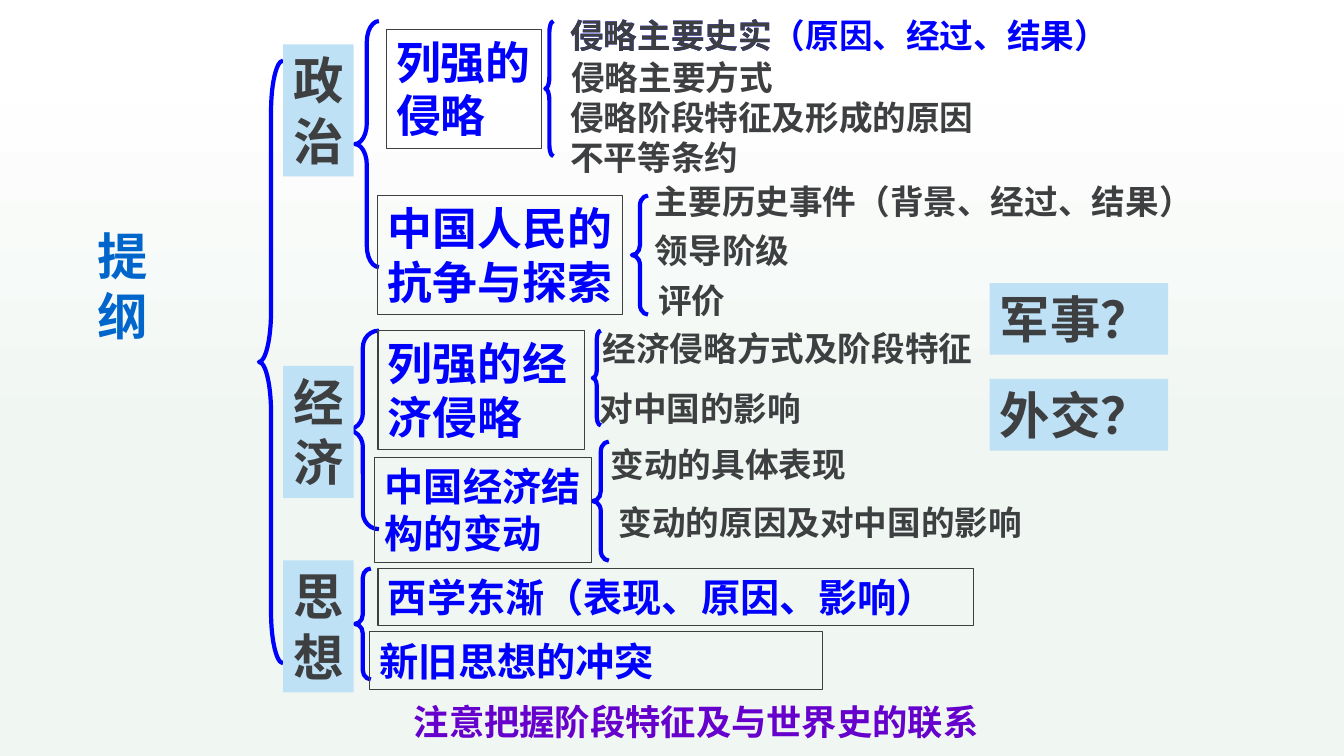
from pptx import Presentation, util as u
from pptx.dml.color import RGBColor
from pptx.enum import shapes, text
from pptx.oxml.ns import qn
from lxml import etree

HUE = {"ink": "3D3F41", "blue": "0000FF", "sky": "BFE1F6", "mist": "F0F6F2",
       "white": "FFFFFF", "title": "0066CC", "rim": "99CCFF",
       "plum": "6600CC", "pink": "CC00CC", "lilac": "CC99FF"}
LATIN, HAN = "Arial", "Noto Sans CJK SC"

# Braces: left, top, width, height, curve
BRACES = [
    (185, 43.2, 17.3, 430.6, 2.11),
    (253.4, 15.1, 17.3, 175.7, 0.86),
    (389.5, 15.1, 5.8, 96.5, 1.4),
    (451.4, 139.7, 11.5, 85, 0.62),
    (247.7, 236.2, 23, 141.8, 0.52),
    (423.4, 236.2, 5.8, 67.7, 0.99),
    (423.4, 315.4, 11.5, 85, 0.62),
    (253.4, 406.1, 11.5, 79.2, 0.58),
]
# Filled tags: left, top, width, height, wrap, text
TAGS = [
    (202.3, 31.7, 50.4, 94.3, False, "政\n治"),
    (202.3, 261.4, 50.4, 94.3, False, "经\n济"),
    (202.3, 400.3, 50.4, 94.3, False, "思\n想"),
    (707, 202.3, 127.4, 51.1, True, "军事？"),
    (707, 270.7, 127.4, 51.1, True, "外交？"),
]
# Framed topics: left, top, width, height, wrap, size, text
TOPICS = [
    (275.8, 20.9, 110.9, 85, False, 32, "列强的\n侵略"),
    (270, 139.7, 175, 85, False, 32, "中国人民的\n抗争与探索"),
    (270, 236.2, 147.6, 85, True, 32, "列强的经济侵略"),
    (267.8, 326.9, 154.8, 74.9, False, 28, "中国经济结\n构的变动"),
    (270, 406.1, 425.5, 41, True, 28, "西学东渐（表现、原因、影响）"),
    (264.2, 451.4, 323.3, 41, True, 28, "新旧思想的冲突"),
]
# Plain notes: left, top, width, wrap, colour, text
NOTES = [
    (400.3, 7.2, 400.3, False, "blue", "侵略主要史实（原因、经过、结果）"),
    (400.3, 7.2, 159.1, False, "ink", "侵略主要史实"),
    (401, 37.4, 159.1, False, "ink", "侵略主要方式"),
    (400.3, 65.5, 303.8, False, "ink", "侵略阶段特征及形成的原因"),
    (400.3, 94.3, 134.6, False, "ink", "不平等条约"),
    (460.8, 126, 400.3, False, "ink", "主要历史事件（背景、经过、结果）"),
    (460.8, 160.6, 126.7, True, "ink", "领导阶级"),
    (463, 196.6, 96.5, True, "ink", "评价"),
    (423.4, 230.4, 289.4, True, "ink", "经济侵略方式及阶段特征"),
    (421.2, 273.6, 200.2, True, "ink", "对中国的影响"),
    (429.1, 313.2, 221, True, "ink", "变动的具体表现"),
    (434.9, 355, 340.6, True, "ink", "变动的原因及对中国的影响"),
]
TITLE = (41.8, 157, 91.4, 198), "提\n纲"
FOOT = (185.8, 496.8, 622.8, 39.6), "注意把握阶段特征及与世界史的联系"

deck = Presentation()
deck.slide_width, deck.slide_height = u.Pt(960), u.Pt(540)
page = deck.slides.add_slide(deck.slide_layouts[6])


def rgb(name):
    return RGBColor.from_string(HUE[name])


def blend(fill, angle, *stops):
    fill.gradient()
    fill.gradient_angle = angle
    for stop, (place, name) in zip(fill.gradient_stops, stops):
        stop.position, stop.color.rgb = place, rgb(name)


def draw(kind, box, fill=None, line=None, width=0.75):
    item = page.shapes.add_shape(kind, *map(u.Pt, box))
    item.shadow.inherit = False
    if fill:
        item.fill.solid()
        item.fill.fore_color.rgb = rgb(fill)
    else:
        item.fill.background()
    if line:
        item.line.color.rgb = rgb(line)
        item.line.width = u.Pt(width)
    else:
        item.line.fill.background()
    return item


def label(box):
    return page.shapes.add_textbox(*map(u.Pt, box))


def write(item, words, size, color, wrap, face=LATIN, grow=True, align="LEFT"):
    frame = item.text_frame
    frame.text = words
    frame.word_wrap = wrap
    frame.vertical_anchor = text.MSO_ANCHOR.TOP
    if grow:
        frame.auto_size = text.MSO_AUTO_SIZE.SHAPE_TO_FIT_TEXT
    runs = []
    for para in frame.paragraphs:
        para.alignment = text.PP_ALIGN[align]
        for run in para.runs:
            run.font.size, run.font.bold = u.Pt(size), True
            run.font.color.rgb = rgb(color)
            run.font.name = face
            etree.SubElement(run.font._element, qn("a:ea"), typeface=HAN)
            runs.append(run)
    return runs


def edge(run, color, width):
    line = etree.Element(qn("a:ln"), w=str(int(u.Pt(width))))
    fill = etree.SubElement(line, qn("a:solidFill"))
    etree.SubElement(fill, qn("a:srgbClr"), val=HUE[color])
    run.font._element.insert(0, line)


# Backdrop
RECT = shapes.MSO_SHAPE.RECTANGLE
back = draw(RECT, (0, 38.2, 960, 501.8))
blend(back.fill, 90, (0.44, "mist"), (1, "white"))

# Braces
for *box, curve in BRACES:
    brace = draw(shapes.MSO_SHAPE.LEFT_BRACE, box, line="blue", width=3)
    brace.adjustments[0], brace.adjustments[1] = curve, 0.5

# Tags, topics and notes
for *box, wrap, words in TAGS:
    write(draw(RECT, box, fill="sky"), words, 36, "ink", wrap)
for *box, wrap, size, words in TOPICS:
    write(draw(RECT, box, line="ink"), words, size, "blue", wrap)
for *box, wrap, color, words in NOTES:
    write(label((*box, 36)), words, 24, color, wrap)

# Title and closing line
box, words = TITLE
for run in write(label(box), words, 36, "title", False, HAN, False, "CENTER"):
    edge(run, "rim", 1.5)
box, words = FOOT
for run in write(label(box), words, 25.2, "plum", False, HAN, False, "CENTER"):
    blend(run.font.fill, 270, (0, "plum"), (1, "pink"))
    edge(run, "lilac", 0.75)

deck.save("out.pptx")
